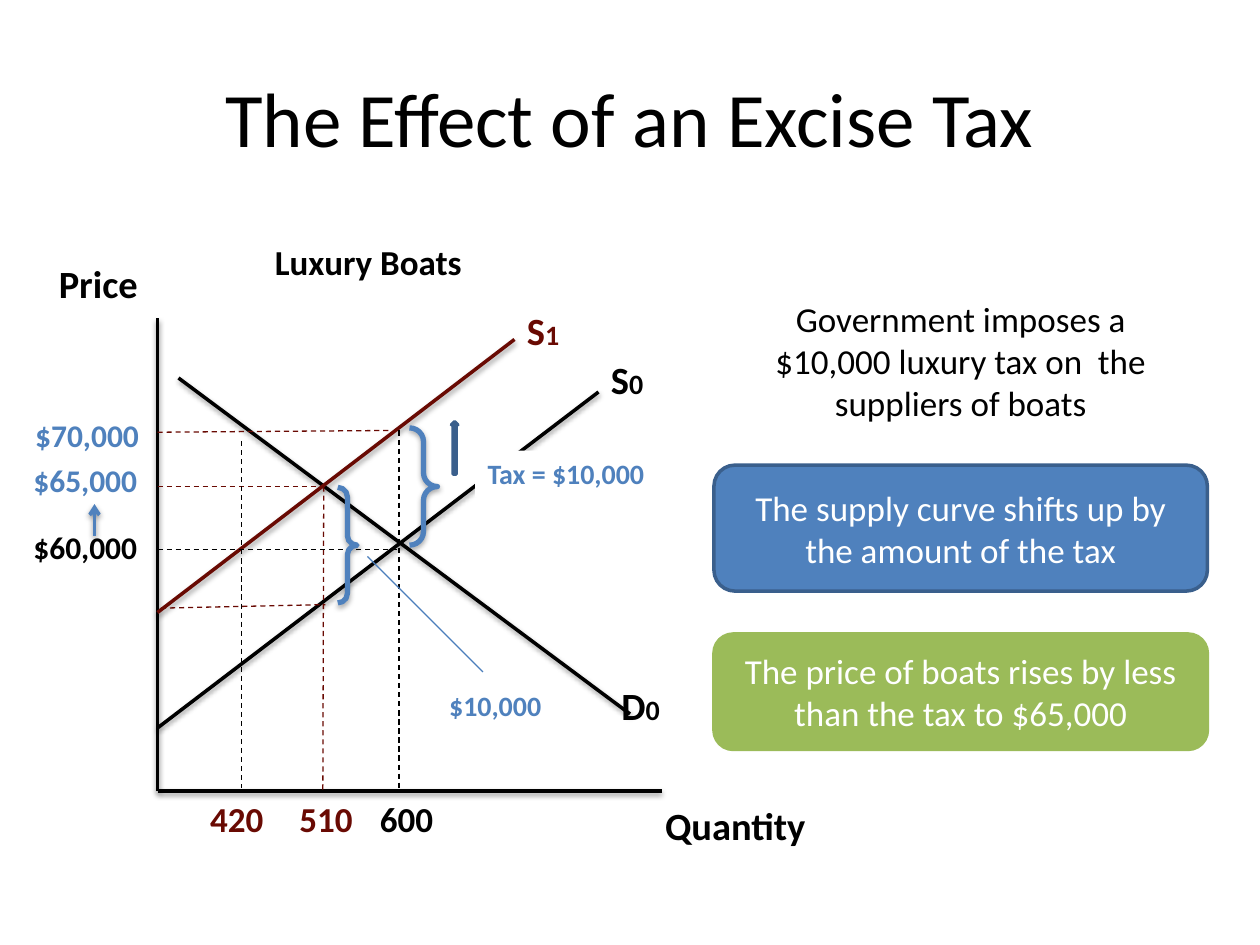
from pptx import Presentation
from pptx.dml.color import RGBColor
from pptx.enum.dml import MSO_LINE
from pptx.enum.shapes import MSO_CONNECTOR, MSO_SHAPE as SHP
from pptx.enum.text import MSO_ANCHOR, PP_ALIGN
from pptx.oxml import parse_xml
from pptx.oxml.ns import nsdecls
from pptx.util import Pt

BLACK, WHITE, RED = "000000", "FFFFFF", "690A03"
BLUE, NAVY, GREEN = "4F81BD", "3A5F8C", "9BBB59"


def rgb(value):
    return RGBColor.from_string(value)


def set_effects(sp, alpha=0):
    shadow = ""
    if alpha:
        shadow = (
            f'<a:outerShdw blurRad="{Pt(3.1)}" dist="{Pt(1.6)}" dir="5400000" rotWithShape="0">'
            f'<a:srgbClr val="{BLACK}"><a:alpha val="{alpha * 1000}"/></a:srgbClr></a:outerShdw>'
        )
    xml = f'<a:effectLst {nsdecls("a")}>{shadow}</a:effectLst>'
    sp._element.spPr.append(parse_xml(xml))


def write(sp, runs, color=BLACK, bold=False, align=PP_ALIGN.LEFT, anchor=MSO_ANCHOR.TOP):
    tf = sp.text_frame
    tf.word_wrap = True
    tf.vertical_anchor = anchor
    p = tf.paragraphs[0]
    p.alignment = align
    for text, size in runs:
        r = p.add_run()
        r.text = text
        r.font.name = "Calibri"
        r.font.size = Pt(size)
        r.font.bold = bold
        r.font.color.rgb = rgb(color)


def add_text(s, x, y, w, h, runs, **style):
    sp = s.shapes.add_textbox(Pt(x), Pt(y), Pt(w), Pt(h))
    write(sp, runs, **style)
    return sp


def add_shape(s, kind, x, y, w, h, fill=None, line=None, width=2):
    sp = s.shapes.add_shape(kind, Pt(x), Pt(y), Pt(w), Pt(h))
    sp.shadow.inherit = False
    if fill:
        sp.fill.solid()
        sp.fill.fore_color.rgb = rgb(fill)
    else:
        sp.fill.background()
    if line:
        sp.line.color.rgb = rgb(line)
        sp.line.width = Pt(width)
    else:
        sp.line.fill.background()
    return sp


def add_line(s, x1, y1, x2, y2, color=BLACK, width=2, shadow=0):
    c = s.shapes.add_connector(MSO_CONNECTOR.STRAIGHT, Pt(x1), Pt(y1), Pt(x2), Pt(y2))
    c.line.color.rgb = rgb(color)
    c.line.width = Pt(width)
    set_effects(c, shadow)
    return c


def add_brace(s, x, y, w, h):
    sp = add_shape(s, SHP.LEFT_BRACE, x, y, w, h, line=BLUE, width=3)
    sp.rotation = 180
    sp.adjustments[0] = 0.489
    sp._element.spPr.remove(sp._element.spPr.find(
        "{http://schemas.openxmlformats.org/drawingml/2006/main}effectLst"))
    set_effects(sp, 35)


def add_curves(s, x, y, w, h):
    for x1, y1, x2, y2, color in [
        (0, 0, 0, h, BLACK),
        (0, h, w, h, BLACK),
        (0, 234, 252, 42, BLACK),
        (12, 34, 270, 226, BLACK),
        (0, 168, 204, 12, RED),
    ]:
        add_line(s, x + x1, y + y1, x + x2, y + y2, color, shadow=38)


def add_guides(s, x, y, h):
    for x1, y1, x2, y2, color in [
        (0, 96, 96, 96, RED),
        (95, 96, 94.5, h, RED),
        (0, 132, 138, 132, BLACK),
        (138, 64, 138, h - 2, BLACK),
        (2, 165.5, 96, 163.5, RED),
        (48, 70, 48, h - 2, BLACK),
        (0, 65, 132, 64, RED),
    ]:
        c = add_line(s, x + x1, y + y1, x + x2, y + y2, color, 0.75)
        c.line.dash_style = MSO_LINE.DASH


def add_labels(s, x, y, h):
    for dx, dy, name, index, color in [
        (252, 18, "S", "0", BLACK),
        (258, 204, "D", "0", BLACK),
        (204, -10, "S", "1", RED),
    ]:
        add_text(s, x + dx, y + dy, 60, 34, [(name, 22), (index, 16)], color=color, bold=True)
    for dx, dy, width, text, size, color in [
        (-63.5, -37, 106, "Price", 22, BLACK),
        (283, h + 3, 125, "Quantity", 22, BLACK),
        (60, -48, 144, "Luxury Boats", 20, BLACK),
        (-77, 52, 96, "$70,000", 18, BLUE),
        (-78, 78, 96, "$65,000", 18, BLUE),
        (-78, 116, 96, "$60,000", 18, BLACK),
        (23, h, 66, "420", 20, RED),
        (74, h, 66, "510", 20, RED),
        (120, h, 72, "600", 20, BLACK),
    ]:
        add_text(s, x + dx, y + dy, width, size * 1.6, [(text, size)], color=color, bold=True)


def add_tax_marks(s, x, y):
    add_brace(s, x + 144, y + 62.5, 16, 67)
    add_brace(s, x + 103, y + 96.5, 11, 66)
    arrow = add_line(s, x - 36, y + 124, x - 36, y + 106, BLUE, shadow=38)
    arrow.line._get_or_add_ln().append(parse_xml(f'<a:tailEnd {nsdecls("a")} type="arrow"/>'))
    add_line(s, x + 120, y + 136, x + 186, y + 202, "4B7EBC", 0.75)
    for dx, dy, w, text in [(181.5, 75.5, 120, "Tax = $10,000"), (156, 208, 78, " $10,000")]:
        sp = add_shape(s, SHP.RECTANGLE, x + dx, y + dy, w, 26.5, fill=WHITE)
        write(sp, [(text, 16)], color=BLUE, bold=True)
    add_shape(s, SHP.UP_ARROW, x + 168, y + 59, 3.6, 30, fill=BLUE, line=NAVY)


def add_graph(s, x, y, w, h):
    add_curves(s, x, y, w, h)
    add_guides(s, x, y, h)
    add_tax_marks(s, x, y)
    add_labels(s, x, y, h)


def add_notes_column(s, x, y, w):
    add_text(s, x + 24, y, w - 48, 80,
             [("Government imposes a $10,000 luxury tax on  the suppliers of boats", 20)],
             align=PP_ALIGN.CENTER)
    for dy, h, fill, line, text in [
        (99.5, 72, BLUE, NAVY, "The supply curve shifts up by the amount of the tax"),
        (196, 66, GREEN, GREEN, "The price of boats rises by less than the tax to $65,000"),
    ]:
        sp = add_shape(s, SHP.ROUNDED_RECTANGLE, x, y + dy, w, h, fill, line)
        write(sp, [(text, 20)], color=WHITE, align=PP_ALIGN.CENTER, anchor=MSO_ANCHOR.MIDDLE)


def main():
    prs = Presentation()
    prs.slide_width, prs.slide_height = Pt(720), Pt(540)
    s = prs.slides.add_slide(prs.slide_layouts[6])
    add_text(s, 36, 21.6, 648, 90, [("The Effect of an Excise Tax", 44)],
             align=PP_ALIGN.CENTER, anchor=MSO_ANCHOR.MIDDLE)
    add_graph(s, 90, 182, 288, 270)
    add_notes_column(s, 408, 166.3, 282)
    prs.save("out.pptx")


if __name__ == "__main__":
    main()
